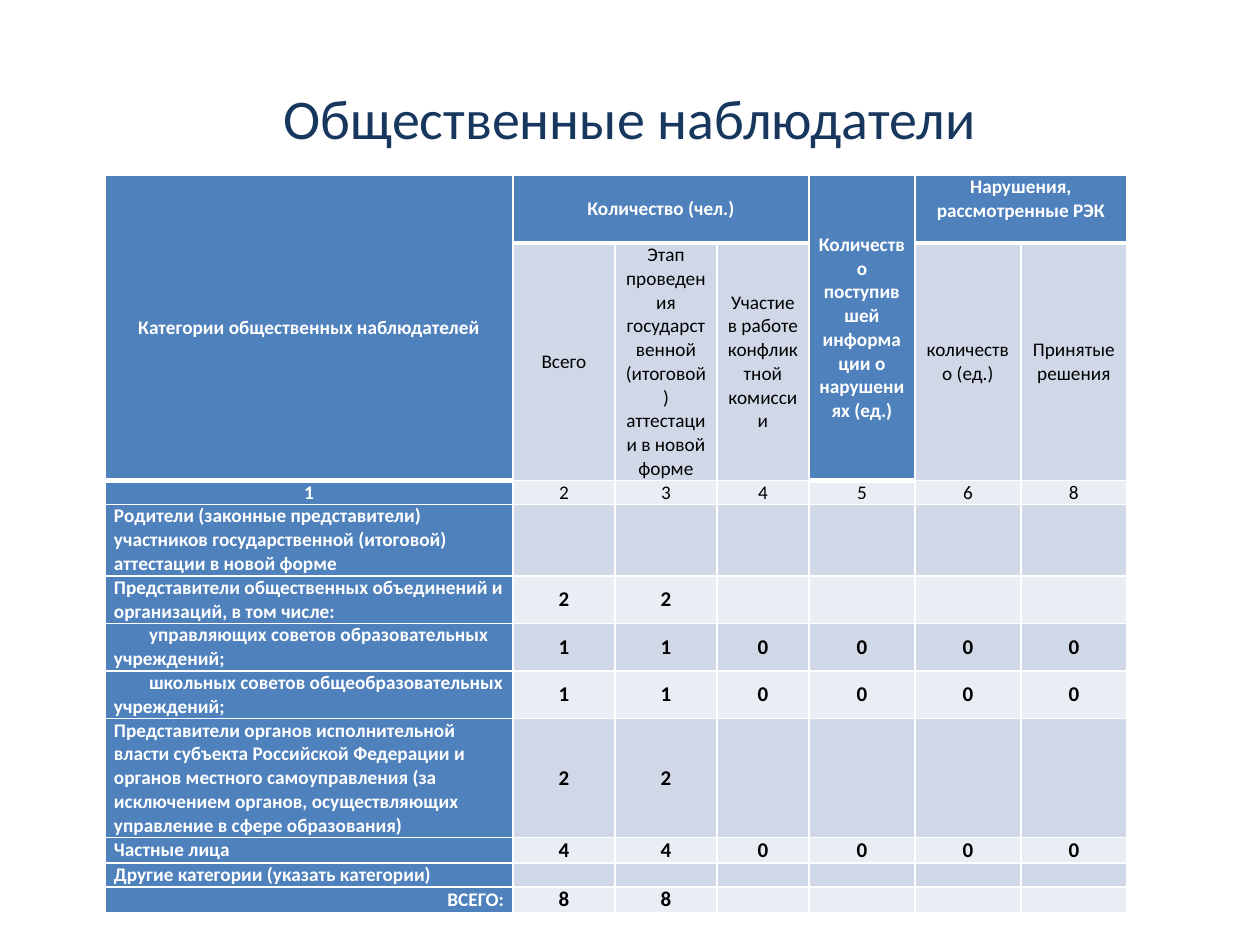
from dataclasses import dataclass

from lxml import etree
from pptx import Presentation
from pptx.dml.color import RGBColor
from pptx.enum.text import MSO_ANCHOR, PP_ALIGN
from pptx.oxml.ns import qn
from pptx.util import Emu, Pt

PX = 914400 // 126
FONT = "Calibri"
WHITE, BLACK, NAVY = "FFFFFF", "000000", "17375E"
BLUE, DARK_BAND, LIGHT_BAND = "4F81BD", "D0D8E8", "E9EDF4"
LEFT, CENTER, RIGHT = PP_ALIGN.LEFT, PP_ALIGN.CENTER, PP_ALIGN.RIGHT
TOP, MIDDLE, BOTTOM = MSO_ANCHOR.TOP, MSO_ANCHOR.MIDDLE, MSO_ANCHOR.BOTTOM

COLUMN_WIDTHS = [408, 102, 102, 92, 106, 106, 106]
ROW_HEIGHTS = [68, 224, 23, 60, 43, 40, 40, 102, 21, 23, 23]
TABLE_LEFT, TABLE_TOP, TABLE_HEIGHT = 105, 175, 721
MERGES = [((0, 0), (1, 0)), ((0, 1), (0, 3)), ((0, 4), (1, 4)), ((0, 5), (0, 6))]
TALL_HEADER_COLUMNS = (0, 4)
FIRST_CATEGORY_ROW = 3


@dataclass
class Category:
    label: str
    values: tuple[str, ...] = ()
    align: PP_ALIGN = LEFT
    indent: int = 0


HEADER_ROWS = [
    ["Категории общественных наблюдателей", "Количество (чел.)", "", "",
     "Количество поступившей информации о нарушениях (ед.)",
     "Нарушения, рассмотренные РЭК", ""],
    ["", "Всего",
     "Этап проведения государственной (итоговой) аттестации в новой форме",
     "Участие в работе конфликтной комиссии", "", "количество (ед.)",
     "Принятые решения"],
    ["1", "2", "3", "4", "5", "6", "8"],
]
CATEGORIES = [
    Category("Родители (законные представители) участников государственной "
             "(итоговой) аттестации в новой форме"),
    Category("Представители общественных объединений и организаций, в том числе:",
             ("2", "2")),
    Category("управляющих советов образовательных учреждений;",
             ("1", "1", "0", "0", "0", "0"), indent=35),
    Category("школьных советов общеобразовательных учреждений;",
             ("1", "1", "0", "0", "0", "0"), indent=35),
    Category("Представители органов исполнительной власти субъекта Российской "
             "Федерации и органов местного самоуправления (за исключением органов, "
             "осуществляющих управление в сфере образования)", ("2", "2")),
    Category("Частные лица", ("4", "4", "0", "0", "0", "0")),
    Category("Другие категории (указать категории)"),
    Category("ВСЕГО:", ("8", "8"), RIGHT, 18),
]


def px(length: int) -> Emu:
    return Emu(length * PX)


def rgb(color: str) -> RGBColor:
    return RGBColor.from_string(color)


def style_paragraph(paragraph, size: int, color: str, bold: bool, align: PP_ALIGN) -> None:
    paragraph.alignment = align
    font = paragraph.font
    font.name, font.size, font.bold = FONT, Pt(size), bold
    font.color.rgb = rgb(color)


def bottom_width(row: int, column: int) -> int:
    """Line under a cell in points: thick below the blue header."""
    return 3 if row == 0 or (row == 1 and column in TALL_HEADER_COLUMNS) else 1


def add_borders(cell, row: int, column: int) -> None:
    top = bottom_width(row - 1, column) if row else 1
    widths = {"lnL": 1, "lnR": 1, "lnT": top, "lnB": bottom_width(row, column)}
    properties = cell._tc.get_or_add_tcPr()
    for side, width in widths.items():
        line = etree.SubElement(properties, qn(f"a:{side}"), w=str(Pt(width)))
        solid = etree.SubElement(line, qn("a:solidFill"))
        etree.SubElement(solid, qn("a:srgbClr"), val=WHITE)


def cell_fill(row: int, column: int) -> str:
    if row == 0 or column == 0 or (row == 1 and column in TALL_HEADER_COLUMNS):
        return BLUE
    return DARK_BAND if row % 2 else LIGHT_BAND


def draw_cell(cell, row: int, column: int, text: str, align: PP_ALIGN, indent: int) -> None:
    add_borders(cell, row, column)
    fill = cell_fill(row, column)
    cell.fill.solid()
    cell.fill.fore_color.rgb = rgb(fill)
    cell.margin_left = cell.margin_right = px(9)
    cell.margin_top = cell.margin_bottom = 0
    cell.vertical_anchor = {(0, 5): TOP, (2, 6): BOTTOM}.get((row, column), MIDDLE)
    paragraph = cell.text_frame.paragraphs[0]
    if not text:
        # The end mark sets the line height of an empty cell.
        etree.SubElement(paragraph._p, qn("a:endParaRPr"), sz="1100")
        return
    paragraph.text = text
    is_value = row >= FIRST_CATEGORY_ROW and column > 0
    on_blue = fill == BLUE
    style_paragraph(paragraph, 12 if is_value else 11, WHITE if on_blue else BLACK,
                    on_blue or is_value, align)
    if indent:
        paragraph._p.get_or_add_pPr().set("indent", str(px(indent)))


def add_observers_table(slide) -> None:
    frame = slide.shapes.add_table(
        len(ROW_HEIGHTS), len(COLUMN_WIDTHS), px(TABLE_LEFT), px(TABLE_TOP),
        px(sum(COLUMN_WIDTHS)), px(TABLE_HEIGHT))
    table = frame.table
    table.first_row = table.horz_banding = False
    for table_column, width in zip(table.columns, COLUMN_WIDTHS):
        table_column.width = px(width)
    for table_row, height in zip(table.rows, ROW_HEIGHTS):
        table_row.height = px(height)
    frame.height = px(TABLE_HEIGHT)

    for row, texts in enumerate(HEADER_ROWS):
        for column, text in enumerate(texts):
            draw_cell(table.cell(row, column), row, column, text, CENTER, 0)
    for row, category in enumerate(CATEGORIES, FIRST_CATEGORY_ROW):
        draw_cell(table.cell(row, 0), row, 0, category.label, category.align, category.indent)
        for column in range(1, len(COLUMN_WIDTHS)):
            value = category.values[column - 1] if column <= len(category.values) else ""
            draw_cell(table.cell(row, column), row, column, value, CENTER, 0)
    for first, last in MERGES:
        table.cell(*first).merge(table.cell(*last))


def add_title(slide) -> None:
    title = slide.shapes.title
    title.left, title.top, title.width, title.height = px(63), px(38), px(1134), px(158)
    title.text_frame.text = "Общественные наблюдатели"
    title.text_frame.vertical_anchor = MIDDLE
    style_paragraph(title.text_frame.paragraphs[0], 32, NAVY, False, CENTER)


def main() -> None:
    presentation = Presentation()
    presentation.slide_width, presentation.slide_height = px(1260), px(945)
    slide = presentation.slides.add_slide(presentation.slide_layouts[5])
    add_title(slide)
    add_observers_table(slide)
    presentation.save("out.pptx")


if __name__ == "__main__":
    main()
